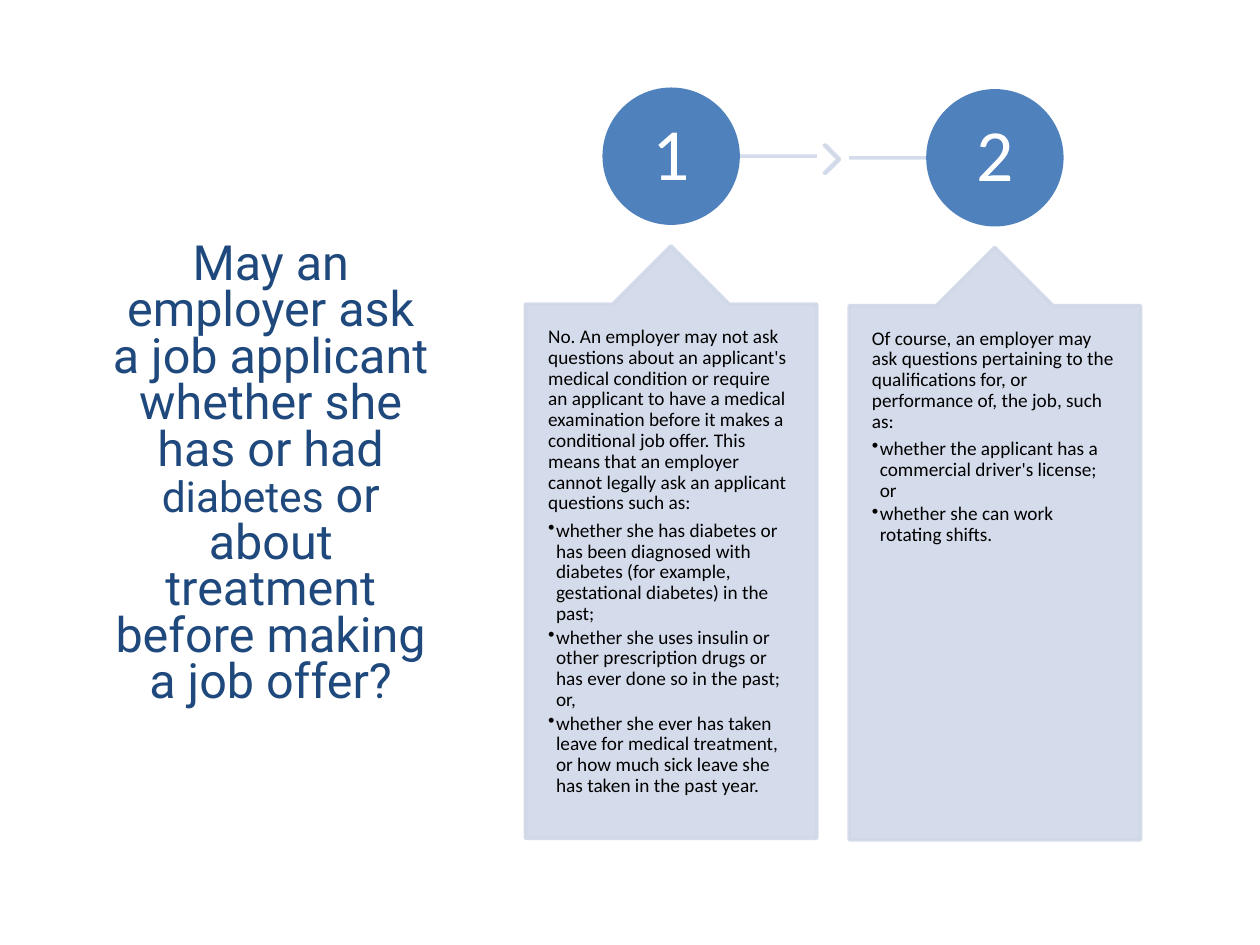
from dataclasses import dataclass

from lxml import etree
from pptx import Presentation
from pptx import util as u
from pptx.dml.color import RGBColor
from pptx.enum import shapes, text
from pptx.oxml.ns import qn

Pt = u.Pt


@dataclass(frozen=True)
class Theme:
    navy: str = "1F497D"
    blue: str = "4F81BD"
    pale: str = "D0D8E8"
    white: str = "FFFFFF"
    black: str = "000000"
    head: str = "Roboto"
    body: str = "Calibri"
    big: float = 27.7
    mid: float = 24.3
    num: float = 42
    small: float = 11
    rule: float = 2
    alpha: int = 90


class Deck:
    def __init__(self, theme):
        self.theme = theme
        self.prs = Presentation()
        self.prs.slide_width, self.prs.slide_height = Pt(720), Pt(540)
        self.slide = self.prs.slides.add_slide(self.prs.slide_layouts[5])

    def font(self, run, face, size, color):
        run.font.name = face
        run.font.size = Pt(size)
        run.font.color.rgb = RGBColor.from_string(color)

    def fade(self, item):
        for color in item._element.spPr.iter(qn("a:srgbClr")):
            alpha = etree.SubElement(color, qn("a:alpha"))
            alpha.set("val", str(self.theme.alpha * 1000))

    def title(self, parts, x, y, w, h):
        box = self.slide.shapes.title
        box.left, box.top, box.width, box.height = map(Pt, (x, y, w, h))
        frame = box.text_frame
        frame.word_wrap = True
        frame.auto_size = text.MSO_AUTO_SIZE.NONE
        frame.vertical_anchor = text.MSO_ANCHOR.MIDDLE
        para = frame.paragraphs[0]
        para.alignment = text.PP_ALIGN.CENTER
        para.line_spacing = 0.8
        for words, size in parts:
            run = para.add_run()
            run.text = words
            self.font(run, self.theme.head, size, self.theme.navy)

    def shape(self, kind, x, y, w, h, color, adj=(), clear=False):
        item = self.slide.shapes.add_shape(kind, Pt(x), Pt(y), Pt(w), Pt(h))
        item.shadow.inherit = False
        for i, value in enumerate(adj):
            item.adjustments[i] = value
        item.fill.solid()
        item.fill.fore_color.rgb = RGBColor.from_string(color)
        item.line.color.rgb = RGBColor.from_string(color)
        item.line.width = Pt(self.theme.rule)
        if clear:
            self.fade(item)

    def line(self, x, y, end):
        item = self.slide.shapes.add_connector(
            shapes.MSO_CONNECTOR.STRAIGHT, Pt(x), Pt(y), Pt(end), Pt(y))
        item.line.color.rgb = RGBColor.from_string(self.theme.pale)
        item.line.width = Pt(self.theme.rule)
        etree.SubElement(item._element.spPr, qn("a:effectLst"))
        self.fade(item)

    def box(self, x, y, w, h, pad):
        item = self.slide.shapes.add_textbox(Pt(x), Pt(y), Pt(w), Pt(h))
        frame = item.text_frame
        frame.word_wrap = True
        frame.margin_left = frame.margin_right = Pt(pad)
        frame.margin_top = frame.margin_bottom = Pt(pad)
        return frame

    def number(self, words, x, y, size):
        frame = self.box(x, y, size, size, 3)
        frame.vertical_anchor = text.MSO_ANCHOR.MIDDLE
        frame.text = words
        para = frame.paragraphs[0]
        para.alignment = text.PP_ALIGN.CENTER
        para.line_spacing = 0.9
        self.font(para.runs[0], self.theme.body, self.theme.num, self.theme.white)

    def bullet(self, para):
        para.level = 1
        props = para._p.get_or_add_pPr()
        props.set("marL", str(Pt(4.5)))
        props.set("indent", str(-Pt(4.5)))
        etree.SubElement(props, qn("a:buChar")).set("char", "•")

    def answer(self, lead, points, x, y, w, h):
        frame = self.box(x, y, w, h, 13)
        frame.text = "\n".join([lead, *points])
        for i, para in enumerate(frame.paragraphs):
            if i:
                self.bullet(para)
            para.line_spacing = 0.9
            para.space_after = Pt(1.65 if i else 3.85)
            self.font(para.runs[0], self.theme.body, self.theme.small, self.theme.black)


ANSWERS = [
    ("No. An employer may not ask questions about an applicant's medical condition "
     "or require an applicant to have a medical examination before it makes a "
     "conditional job offer. This means that an employer cannot legally ask an "
     "applicant questions such as:",
     ["whether she has diabetes or has been diagnosed with diabetes (for example, "
      "gestational diabetes) in the past;",
      "whether she uses insulin or other prescription drugs or has ever done so in "
      "the past; or,",
      "whether she ever has taken leave for medical treatment, or how much sick "
      "leave she has taken in the past year."]),
    ("Of course, an employer may ask questions pertaining to the qualifications for, "
     "or performance of, the job, such as:",
     ["whether the applicant has a commercial driver's license; or",
      "whether she can work rotating shifts."]),
]


def main():
    theme = Theme()
    deck = Deck(theme)
    kind = shapes.MSO_SHAPE
    deck.title([("May an employer ask a job applicant whether she has or had ", theme.big),
                ("diabetes", theme.mid),
                (" or about treatment before making a job offer?", theme.big)],
               55.5, 109.5, 198.5, 324.5)

    left, pitch, wide, tall, drop = 300.25, 185, 166.5, 338.5, 0.9
    disc, tip = 76.5, 33.25
    inner = 54
    spans = [(92, wide), (0, wide / 2)]
    deck.shape(kind.CHEVRON, 471, 83, 8.75, 16, theme.pale, [0.9], True)
    for i, (lead, points) in enumerate(ANSWERS):
        x, y = left + i * pitch, 51 + i * drop
        mid = x + wide / 2
        start, end = spans[i]
        deck.line(x + start, y + disc / 2, x + end)
        deck.shape(kind.OVAL, mid - disc / 2, y, disc, disc, theme.blue)
        deck.number(str(i + 1), mid - inner / 2, y + (disc - inner) / 2, inner)
        deck.shape(kind.UP_ARROW_CALLOUT, x, y + 89.5, wide, tall,
                   theme.pale, [0.5, 0.2, 0.2, 1], True)
        deck.answer(lead, points, x, y + 89.5 + tip, wide, tall - tip)
    deck.prs.save("out.pptx")


if __name__ == "__main__":
    main()
